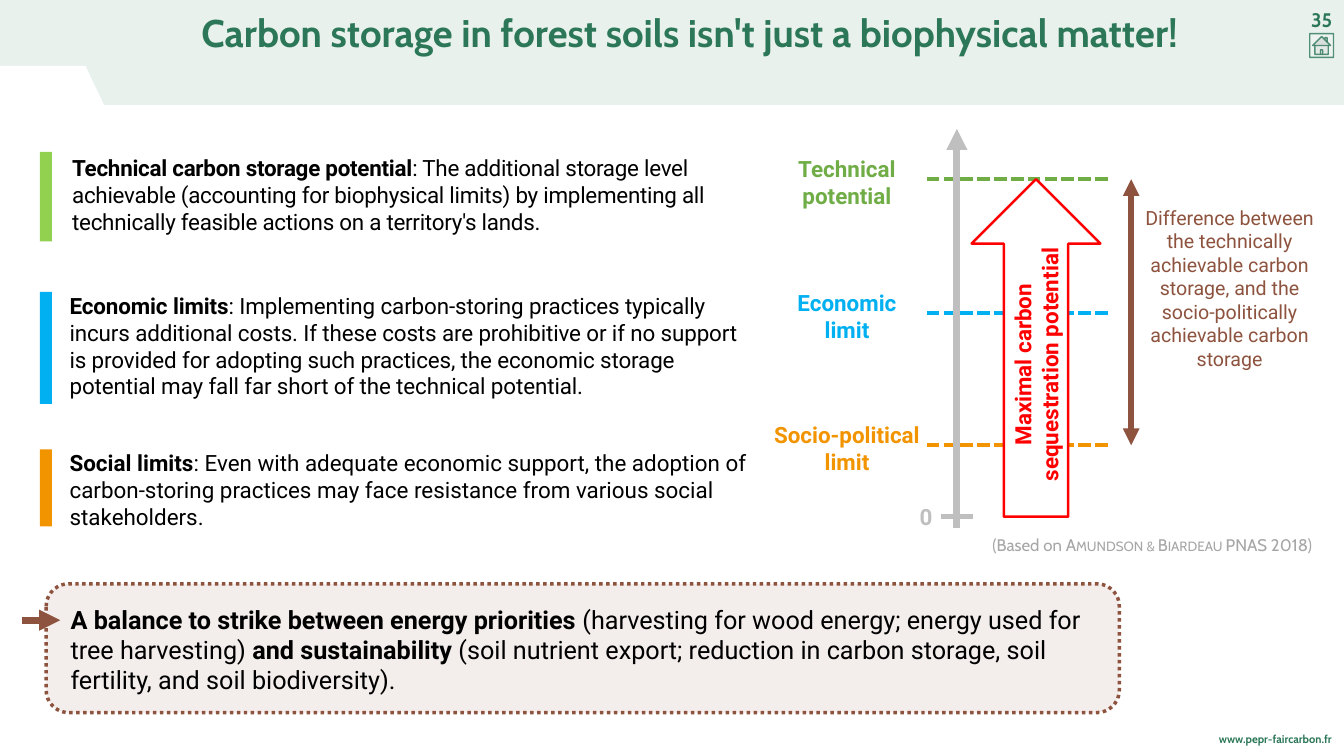
import pptx
import pptx.dml.color
import pptx.enum.dml
import pptx.enum.shapes
import pptx.enum.text
import pptx.oxml.ns
import pptx.util
from lxml import etree

Pt = pptx.util.Pt
SHAPE = pptx.enum.shapes.MSO_SHAPE
ALIGN = pptx.enum.text.PP_ALIGN
ANCHOR = pptx.enum.text.MSO_ANCHOR
DASH = pptx.enum.dml.MSO_LINE

COLORS = {
    "green": "2B7758", "technical": "70AD47", "lime": "92D050",
    "economic": "00B0F0", "social": "F29400", "brown": "8D533E",
    "red": "FF0000", "axis": "BFBFBF", "citation": "A6A6A6",
    "black": "000000", "white": "FFFFFF",
}


def add_child(parent, tag, **attributes):
    return etree.SubElement(parent, pptx.oxml.ns.qn(tag), attributes)


def set_color(fill, color, opacity=100):
    fill.solid()
    fill.fore_color.rgb = pptx.dml.color.RGBColor.from_string(COLORS[color])
    if opacity < 100:
        # The fill's colour element is the only place that holds transparency.
        color_element = fill._xPr.find(".//" + pptx.oxml.ns.qn("a:srgbClr"))
        add_child(color_element, "a:alpha", val=str(opacity * 1000))


def style_shape(shape, fill, opacity=100, line=None, line_width=0,
                line_opacity=100, dash=None):
    shape.shadow.inherit = False
    set_color(shape.fill, fill, opacity)
    if line is None:
        shape.line.fill.background()
        return
    set_color(shape.line.fill, line, line_opacity)
    shape.line.width = Pt(line_width)
    if dash is not None:
        shape.line.dash_style = dash


def add_shape(page, kind, left, top, width, height, fill, **style):
    shape = page.shapes.add_shape(kind, Pt(left), Pt(top), Pt(width), Pt(height))
    style_shape(shape, fill, **style)
    return shape


def add_text(page, left, top, width, height, spans, size, color, font="Roboto",
             align=ALIGN.LEFT, inset=3.6, wrap=True, spacing=None):
    """Add a one-paragraph text box; each span is (text, bold, extra run attributes)."""
    box = page.shapes.add_textbox(Pt(left), Pt(top), Pt(width), Pt(height))
    frame = box.text_frame
    frame.word_wrap = wrap
    frame.margin_left = frame.margin_right = Pt(inset)
    frame.margin_top = frame.margin_bottom = Pt(inset)
    para = frame.paragraphs[0]
    para.alignment = align
    if spacing:
        para.line_spacing = spacing
    for text, bold, extras in spans:
        span = para.add_run()
        span.text = text
        span.font.name = font
        span.font.size = Pt(size)
        span.font.bold = bold
        span.font.color.rgb = pptx.dml.color.RGBColor.from_string(COLORS[color])
        for name, value in extras.items():
            span.font._element.set(name, value)
    return box


def add_line(page, start, end, color, width, dash=None, head=False, tail=False):
    line = page.shapes.add_connector(
        pptx.enum.shapes.MSO_CONNECTOR.STRAIGHT,
        Pt(start[0]), Pt(start[1]), Pt(end[0]), Pt(end[1]))
    set_color(line.line.fill, color)
    line.line.width = Pt(width)
    if dash is not None:
        line.line.dash_style = dash
    outline = line.line._get_or_add_ln()
    if head:
        add_child(outline, "a:headEnd", type="triangle")
    if tail:
        add_child(outline, "a:tailEnd", type="triangle")
    add_child(line._element.spPr, "a:effectLst")


def add_header(page):
    add_shape(page, SHAPE.RECTANGLE, 0, 0, 1920, 150, "green", opacity=10)
    add_shape(page, SHAPE.ACTION_BUTTON_HOME, 1871, 48, 34, 34, "white", opacity=20,
              line="green", line_width=2, line_opacity=80)
    builder = page.shapes.build_freeform(Pt(0), Pt(94))
    builder.add_line_segments(
        [(Pt(122), Pt(94)), (Pt(178), Pt(212)), (Pt(0), Pt(212))], close=True)
    style_shape(builder.convert_to_shape(), "white")
    add_text(page, 1868, 8, 40, 41, [("35", True, {})], 28, "green", "Cabin",
             ALIGN.CENTER, wrap=False)
    add_text(page, 150, 16, 1670, 128,
             [("Carbon storage in forest soils isn't just a biophysical matter!", True, {})],
             55, "green", "Cabin", ALIGN.CENTER, inset=4.3, spacing=0.9)


def add_definition(page, top, bar_height, color, width, term, meaning,
                   inset=0, tracking="0"):
    add_shape(page, SHAPE.RECTANGLE, 57, top, 17, bar_height, color)
    add_text(page, 99.4, top, width, bar_height,
             [(term, True, {"spc": tracking}), (meaning, False, {"spc": tracking})],
             32, "black", inset=inset)


def add_level(page, y, label, label_width, color):
    add_text(page, 1210 - label_width / 2, y - 38, label_width, 84,
             [(label, True, {})], 32, color, align=ALIGN.CENTER)
    add_line(page, (1324, y), (1588, y), color, 6, DASH.SQUARE_DOT)


def add_diagram(page):
    add_line(page, (1344, 738), (1390, 738), "axis", 6)
    add_text(page, 1310, 715, 26, 45, [("0", True, {})], 32, "axis",
             align=ALIGN.CENTER, wrap=False)
    add_level(page, 256, "Technical potential", 260, "technical")
    add_level(page, 447, "Economic limit", 200, "economic")
    add_level(page, 636, "Socio-political limit", 264, "social")
    add_line(page, (1616, 636), (1616, 256), "brown", 8, head=True, tail=True)
    add_text(page, 1632, 290, 249, 246,
             [("Difference between the technically achievable carbon storage, and the "
               "socio-politically achievable carbon storage", False, {})],
             28, "brown", align=ALIGN.CENTER)
    add_shape(page, SHAPE.UP_ARROW, 1388, 256, 184, 482, "white",
              line="red", line_width=3.5)
    caption = add_text(page, 1268, 479, 424, 84,
                       [("Maximal carbon sequestration potential", True, {})],
                       32, "red", align=ALIGN.CENTER)
    caption.rotation = 270
    caption.text_frame.vertical_anchor = ANCHOR.MIDDLE
    add_line(page, (1367, 755), (1367, 184), "axis", 10, tail=True)
    add_text(page, 1346, 761, 532, 37,
             [("(Based on ", False, {}),
              ("Amundson & Biardeau ", False, {"cap": "small"}),
              ("PNAS 2018)", False, {})],
             24, "citation", "Cabin", ALIGN.RIGHT)


def add_conclusion(page):
    panel = add_shape(page, SHAPE.ROUNDED_RECTANGLE, 66, 834, 1533, 184, "brown",
                      opacity=10, line="brown", line_width=5, dash=DASH.ROUND_DOT)
    panel.adjustments[0] = 0.175
    add_text(page, 83.5, 846, 1498, 163,
             [("A balance to strike between energy priorities ", True, {}),
              ("(harvesting for wood energy; energy used for tree harvesting) ", False, {}),
              ("and sustainability ", True, {}),
              ("(soil nutrient export; reduction in carbon storage, soil fertility, "
               "and soil biodiversity).", False, {})],
             36, "black", inset=17.3)
    add_line(page, (86, 886), (32, 886), "brown", 10, head=True)


def main():
    deck = pptx.Presentation()
    deck.slide_width, deck.slide_height = Pt(1920), Pt(1080)
    page = deck.slides.add_slide(deck.slide_layouts[6])
    add_header(page)
    add_definition(
        page, 217, 128, "lime", 968, "Technical carbon storage potential",
        ": The additional storage level achievable (accounting for biophysical limits) "
        "by implementing all technically feasible actions on a territory's lands.",
        inset=3.6, tracking="-40")
    add_definition(
        page, 417, 160, "economic", 964, "Economic limits",
        ": Implementing carbon-storing practices typically incurs additional costs. "
        "If these costs are prohibitive or if no support is provided for adopting such "
        "practices, the economic storage potential may fall far short of the technical "
        "potential.", tracking="-20")
    add_definition(
        page, 642, 110, "social", 989, "Social limits",
        ": Even with adequate economic support, the adoption of carbon-storing practices "
        "may face resistance from various social stakeholders.")
    add_diagram(page)
    add_conclusion(page)
    add_text(page, 1724, 1042, 182, 45, [("www.pepr-faircarbon.fr", True, {})],
             16, "green", "Cabin", ALIGN.RIGHT)
    deck.save("out.pptx")


if __name__ == "__main__":
    main()
